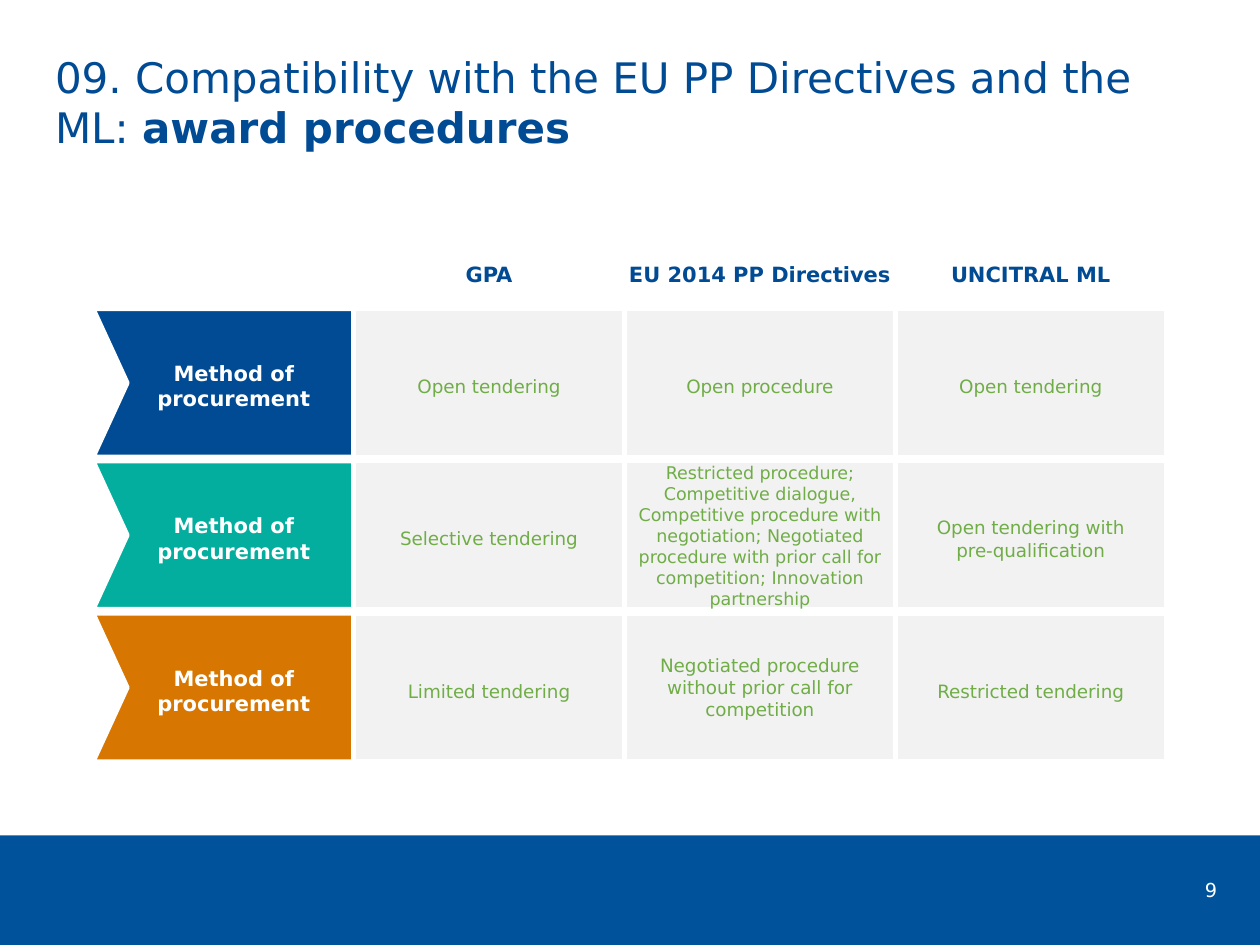
from dataclasses import dataclass

from pptx import Presentation
from pptx.dml.color import RGBColor
from pptx.enum.shapes import MSO_SHAPE
from pptx.enum.text import MSO_ANCHOR, MSO_AUTO_SIZE, PP_ALIGN
from pptx.util import Cm, Pt

RECTANGLE = MSO_SHAPE.RECTANGLE
TOP, MIDDLE, BOTTOM = MSO_ANCHOR.TOP, MSO_ANCHOR.MIDDLE, MSO_ANCHOR.BOTTOM
LEFT, CENTER, RIGHT = PP_ALIGN.LEFT, PP_ALIGN.CENTER, PP_ALIGN.RIGHT
GROW, FIXED = MSO_AUTO_SIZE.SHAPE_TO_FIT_TEXT, MSO_AUTO_SIZE.NONE


@dataclass(frozen=True)
class Theme:
    font: str = "DejaVu Sans"
    blue: str = "004B93"
    teal: str = "04AE9E"
    orange: str = "D77701"
    footer: str = "00539B"
    cell: str = "F2F2F2"
    green: str = "70AD47"
    white: str = "FFFFFF"
    title_size: float = 24
    heading_size: float = 12
    cell_size: float = 10.5
    dense_size: float = 10
    number_size: float = 11
    cell_spacing: float = 13.1
    border: float = 3


class SlideBuilder:
    """Draws styled elements; all lengths are in centimetres."""

    def __init__(self, slide, theme):
        self.slide = slide
        self.theme = theme

    def paint(self, shape, fill, bordered):
        shape.shadow.inherit = False
        shape.fill.solid()
        shape.fill.fore_color.rgb = RGBColor.from_string(fill)
        if bordered:
            shape.line.color.rgb = RGBColor.from_string(self.theme.white)
            shape.line.width = Pt(self.theme.border)
        else:
            shape.line.fill.background()

    def rectangle(self, left, top, width, height, fill, bordered=True):
        shape = self.slide.shapes.add_shape(
            RECTANGLE, Cm(left), Cm(top), Cm(width), Cm(height))
        self.paint(shape, fill, bordered)

    def notched_box(self, left, top, width, height, notch, fill):
        right, bottom = left + width, top + height
        corners = [(right, top), (right, bottom), (left, bottom),
                   (left + notch, top + height / 2)]
        builder = self.slide.shapes.build_freeform(Cm(left), Cm(top))
        builder.add_line_segments([(Cm(x), Cm(y)) for x, y in corners])
        self.paint(builder.convert_to_shape(), fill, True)

    def text(self, left, top, width, height, runs, size, color, align=CENTER,
             anchor=MIDDLE, auto_size=GROW, wrap=True, margins=None, spacing=None):
        """Add a text box; runs is a list of (text, bold) pairs."""
        box = self.slide.shapes.add_textbox(
            Cm(left), Cm(top), Cm(width), Cm(height))
        frame = box.text_frame
        frame.word_wrap = wrap
        frame.auto_size = auto_size
        frame.vertical_anchor = anchor
        if margins:
            side, edge = margins
            frame.margin_left = frame.margin_right = Cm(side)
            frame.margin_top = frame.margin_bottom = Cm(edge)
        paragraph = frame.paragraphs[0]
        paragraph.alignment = align
        if spacing:
            paragraph.line_spacing = Pt(spacing)
        for content, bold in runs:
            run = paragraph.add_run()
            run.text = content
            run.font.name = self.theme.font
            run.font.size = Pt(size)
            run.font.bold = bold
            run.font.color.rgb = RGBColor.from_string(color)


SLIDE_WIDTH, SLIDE_HEIGHT = 25.4, 19.05
FOOTER_TOP = 16.84
ARROW_LEFT, ARROW_WIDTH, NOTCH = 1.87, 5.26, 0.69
GRID_LEFT, GRID_TOP = 7.13, 6.22
CELL_WIDTH, CELL_HEIGHT, ROW_STEP = 5.46, 3.0, 3.07
LABEL_WIDTH, LABEL_HEIGHT = 5.13, 1.27
TEXT_WIDTH, DENSE_WIDTH = 4.57, 5.72
TEXT_DROP = 0.06


def main():
    theme = Theme()
    presentation = Presentation()
    presentation.slide_width = Cm(SLIDE_WIDTH)
    presentation.slide_height = Cm(SLIDE_HEIGHT)
    slide = presentation.slides.add_slide(presentation.slide_layouts[6])
    builder = SlideBuilder(slide, theme)

    builder.rectangle(0, FOOTER_TOP, SLIDE_WIDTH, SLIDE_HEIGHT - FOOTER_TOP,
                      theme.footer, bordered=False)
    builder.text(0.86, 0.91, 23.95, 1.4,
                 [("09. Compatibility with the EU PP Directives and the ML: ", False),
                  ("award procedures", True)],
                 theme.title_size, theme.blue, LEFT, TOP, FIXED)

    headings = [("GPA", 1.5), ("EU 2014 PP Directives", 5.84), ("UNCITRAL ML", 3.81)]
    for column, (heading, width) in enumerate(headings):
        center = GRID_LEFT + (column + 0.5) * CELL_WIDTH
        builder.text(center - width / 2, 5.13, width, 0.77, [(heading, True)],
                     theme.heading_size, theme.blue, anchor=BOTTOM, wrap=False)

    # Each cell holds its text and the number of lines it takes.
    rows = [
        (theme.blue, [("Open tendering", 1), ("Open procedure", 1),
                      ("Open tendering", 1)]),
        (theme.teal, [("Selective tendering", 1),
                      ("Restricted procedure; Competitive dialogue, Competitive "
                       "procedure with negotiation; Negotiated procedure with prior "
                       "call for competition; Innovation partnership", 7),
                      ("Open tendering with pre-qualification", 2)]),
        (theme.orange, [("Limited tendering", 1),
                        ("Negotiated procedure without prior call for competition", 3),
                        ("Restricted tendering", 1)]),
    ]
    for row, (color, cells) in enumerate(rows):
        top = GRID_TOP + row * ROW_STEP
        middle = top + CELL_HEIGHT / 2
        builder.notched_box(ARROW_LEFT, top, ARROW_WIDTH, CELL_HEIGHT, NOTCH, color)
        builder.text(ARROW_LEFT + 0.28, middle + TEXT_DROP - LABEL_HEIGHT / 2,
                     LABEL_WIDTH, LABEL_HEIGHT, [("Method of procurement", True)],
                     theme.heading_size, theme.white)
        for column in range(len(cells)):
            builder.rectangle(GRID_LEFT + column * CELL_WIDTH, top,
                              CELL_WIDTH, CELL_HEIGHT, theme.cell)
        for column, (content, lines) in enumerate(cells):
            center = GRID_LEFT + (column + 0.5) * CELL_WIDTH
            dense = lines > 3
            width = DENSE_WIDTH if dense else TEXT_WIDTH
            height = 0.08 + 0.45 * lines
            drop = TEXT_DROP if lines < 3 else 0
            builder.text(center - width / 2, middle + drop - height / 2,
                         width, height, [(content, False)],
                         theme.dense_size if dense else theme.cell_size,
                         theme.green, margins=(0.1, 0.05),
                         spacing=theme.cell_spacing if lines < 3 else None)

    builder.text(19.51, 17.58, 5.28, 0.74, [("9", False)], theme.number_size,
                 theme.white, RIGHT, TOP, FIXED)
    presentation.save("out.pptx")


if __name__ == "__main__":
    main()
